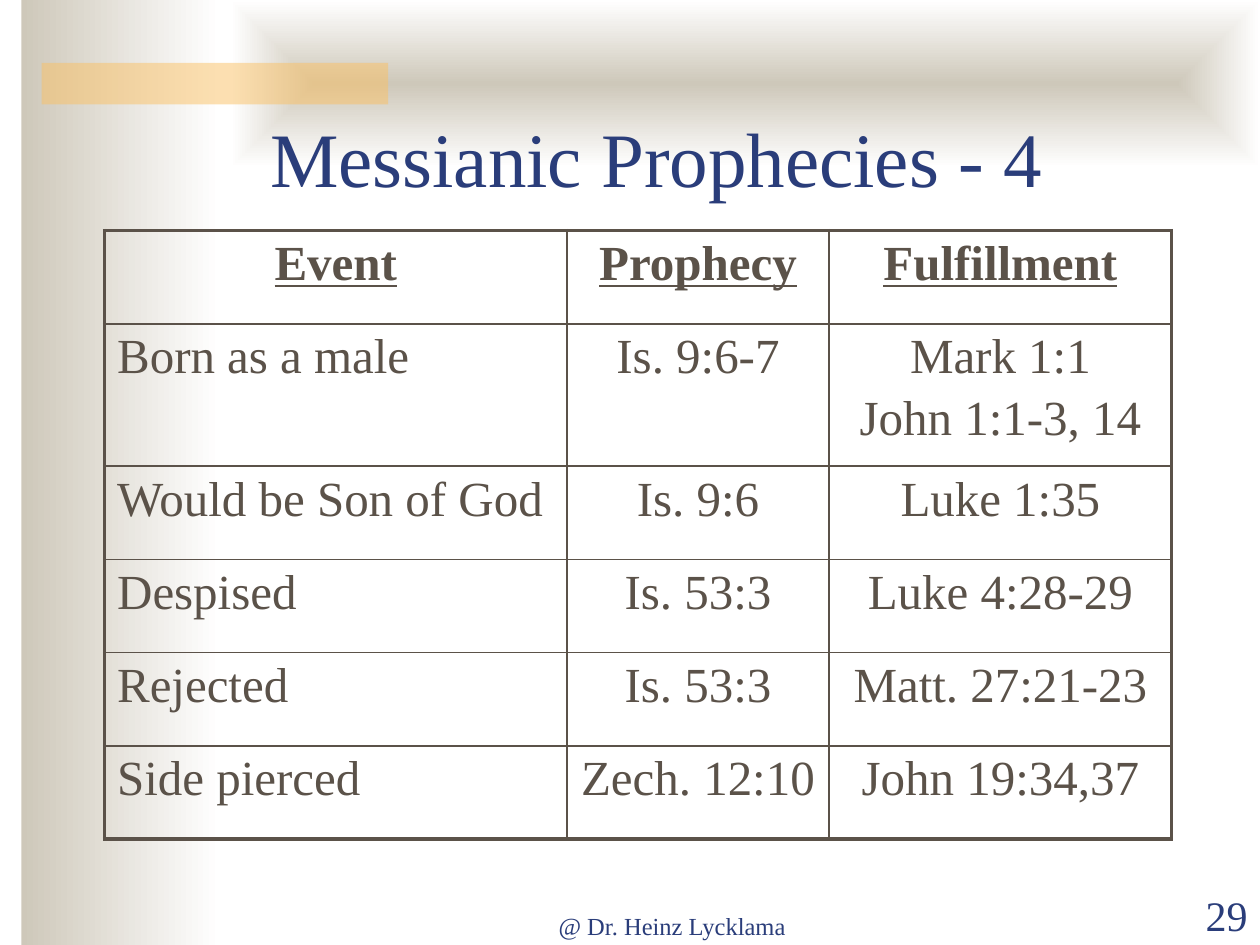
"""Build a slide with a table of Messianic prophecies and their fulfillment."""
from dataclasses import dataclass

from lxml import etree
from pptx import Presentation
from pptx.dml.color import RGBColor
from pptx.enum.shapes import MSO_SHAPE
from pptx.enum.text import MSO_ANCHOR, MSO_AUTO_SIZE, PP_ALIGN
from pptx.oxml.ns import qn
from pptx.util import Inches, Pt

RECTANGLE = MSO_SHAPE.RECTANGLE
BOTTOM = MSO_ANCHOR.BOTTOM
NO_AUTOFIT = MSO_AUTO_SIZE.NONE
LEFT, CENTER, RIGHT = PP_ALIGN.LEFT, PP_ALIGN.CENTER, PP_ALIGN.RIGHT

FONT = "Times New Roman"
COLORS = {
    "navy": "2A3D7A",
    "brown": "5B5249",
    "stone": "CEC8BA",
    "white": "FFFFFF",
    "amber": "FAC164",
}
COLUMN_WIDTHS = [3.67, 2.08, 2.72]
ROW_HEIGHTS = [0.74, 1.13, 0.74, 0.74, 0.74, 0.74]
ROWS = [
    ("Event", "Prophecy", "Fulfillment"),
    ("Born as a male", "Is. 9:6-7", "Mark 1:1\nJohn 1:1-3, 14"),
    ("Would be Son of God", "Is. 9:6", "Luke 1:35"),
    ("Despised", "Is. 53:3", "Luke 4:28-29"),
    ("Rejected", "Is. 53:3", "Matt. 27:21-23"),
    ("Side pierced", "Zech. 12:10", "John 19:34,37"),
]
OUTER_LINE, INNER_LINE = 2.25, 1


@dataclass
class Box:
    left: float
    top: float
    width: float
    height: float

    def lengths(self) -> list:
        return [Inches(n) for n in (self.left, self.top, self.width, self.height)]


@dataclass
class Label:
    text: str
    box: Box
    size: float
    alignment: PP_ALIGN


SIDE_BAND = Box(0.17, 0, 1.58, 7.5)
TOP_BAND = Box(1.83, 0, 8.17, 1.33)
ACCENT_BAR = Box(0.33, 0.5, 2.75, 0.33)
TABLE_BOX = Box(0.83, 1.83, 8.47, 4.83)
TITLE = Label("Messianic Prophecies - 4", Box(1.75, 0.83, 6.92, 0.83), 44, CENTER)
FOOTERS = [
    Label("@ Dr. Heinz Lycklama", Box(3.75, 7.01, 3.17, 0.5), 14, CENTER),
    Label("29", Box(9, 7.01, 1, 0.5), 24, RIGHT),
]


def color(name: str) -> RGBColor:
    return RGBColor.from_string(COLORS[name])


def style_font(font, size: float, color_name: str) -> None:
    font.name = FONT
    font.size = Pt(size)
    font.color.rgb = color(color_name)


def add_rectangle(slide, box: Box):
    shape = slide.shapes.add_shape(RECTANGLE, *box.lengths())
    shape.shadow.inherit = False
    shape.line.fill.background()
    return shape


def add_gradient_band(slide, box: Box, from_center: bool = False) -> None:
    shape = add_rectangle(slide, box)
    shape.fill.gradient()
    shape.fill.gradient_angle = 0
    for stop, name, position in zip(shape.fill.gradient_stops, ("stone", "white"), (0, 1)):
        stop.color.rgb = color(name)
        stop.position = position
    if from_center:
        gradient = shape._element.spPr.find(qn("a:gradFill"))
        gradient.remove(gradient.find(qn("a:lin")))
        shading = etree.SubElement(gradient, qn("a:path"))
        shading.set("path", "shape")
        center = etree.SubElement(shading, qn("a:fillToRect"))
        for side in "ltrb":
            center.set(side, "50000")


def add_accent_bar(slide) -> None:
    shape = add_rectangle(slide, ACCENT_BAR)
    shape.fill.solid()
    shape.fill.fore_color.rgb = color("amber")
    solid = shape._element.spPr.find(qn("a:solidFill"))
    etree.SubElement(solid[0], qn("a:alpha")).set("val", "50000")


def write_label(shape, label: Label) -> None:
    frame = shape.text_frame
    frame.text = label.text
    frame.word_wrap = True
    frame.auto_size = NO_AUTOFIT
    frame.vertical_anchor = BOTTOM
    paragraph = frame.paragraphs[0]
    paragraph.alignment = label.alignment
    style_font(paragraph.runs[0].font, label.size, "navy")


def place_title(slide) -> None:
    title = slide.shapes.title
    title.left, title.top, title.width, title.height = TITLE.box.lengths()
    write_label(title, TITLE)
    slide.shapes._spTree.append(title._element)


def set_borders(cell, row: int, column: int) -> None:
    outer_sides = {
        "L": column == 0,
        "R": column == len(COLUMN_WIDTHS) - 1,
        "T": row == 0,
        "B": row == len(ROWS) - 1,
    }
    properties = cell._tc.get_or_add_tcPr()
    for side, is_outer in outer_sides.items():
        line = etree.SubElement(properties, qn(f"a:ln{side}"))
        line.set("w", str(Pt(OUTER_LINE if is_outer else INNER_LINE)))
        fill = etree.SubElement(line, qn("a:solidFill"))
        etree.SubElement(fill, qn("a:srgbClr")).set("val", COLORS["brown"])


def fill_cell(cell, text: str, row: int, column: int) -> None:
    is_header = row == 0
    cell.text_frame.text = text
    for index, paragraph in enumerate(cell.text_frame.paragraphs):
        paragraph.alignment = CENTER if is_header or column else LEFT
        if index:
            paragraph.space_before = Pt(4.5)
        font = paragraph.runs[0].font
        style_font(font, 28, "brown")
        font.bold = is_header
        font.underline = is_header
    set_borders(cell, row, column)
    cell.fill.background()


def add_prophecy_table(slide) -> None:
    frame = slide.shapes.add_table(len(ROWS), len(COLUMN_WIDTHS), *TABLE_BOX.lengths())
    table = frame.table
    table.first_row = False
    table.horz_banding = False
    for column, width in zip(table.columns, COLUMN_WIDTHS):
        column.width = Inches(width)
    for row, height in zip(table.rows, ROW_HEIGHTS):
        row.height = Inches(height)
    for row_index, texts in enumerate(ROWS):
        for column_index, text in enumerate(texts):
            fill_cell(table.cell(row_index, column_index), text, row_index, column_index)


def main() -> None:
    presentation = Presentation()
    presentation.slide_width = Inches(10)
    presentation.slide_height = Inches(7.5)
    slide = presentation.slides.add_slide(presentation.slide_layouts[5])
    add_gradient_band(slide, SIDE_BAND)
    add_gradient_band(slide, TOP_BAND, from_center=True)
    add_accent_bar(slide)
    for footer in FOOTERS:
        write_label(slide.shapes.add_textbox(*footer.box.lengths()), footer)
    place_title(slide)
    add_prophecy_table(slide)
    presentation.save("out.pptx")


if __name__ == "__main__":
    main()
